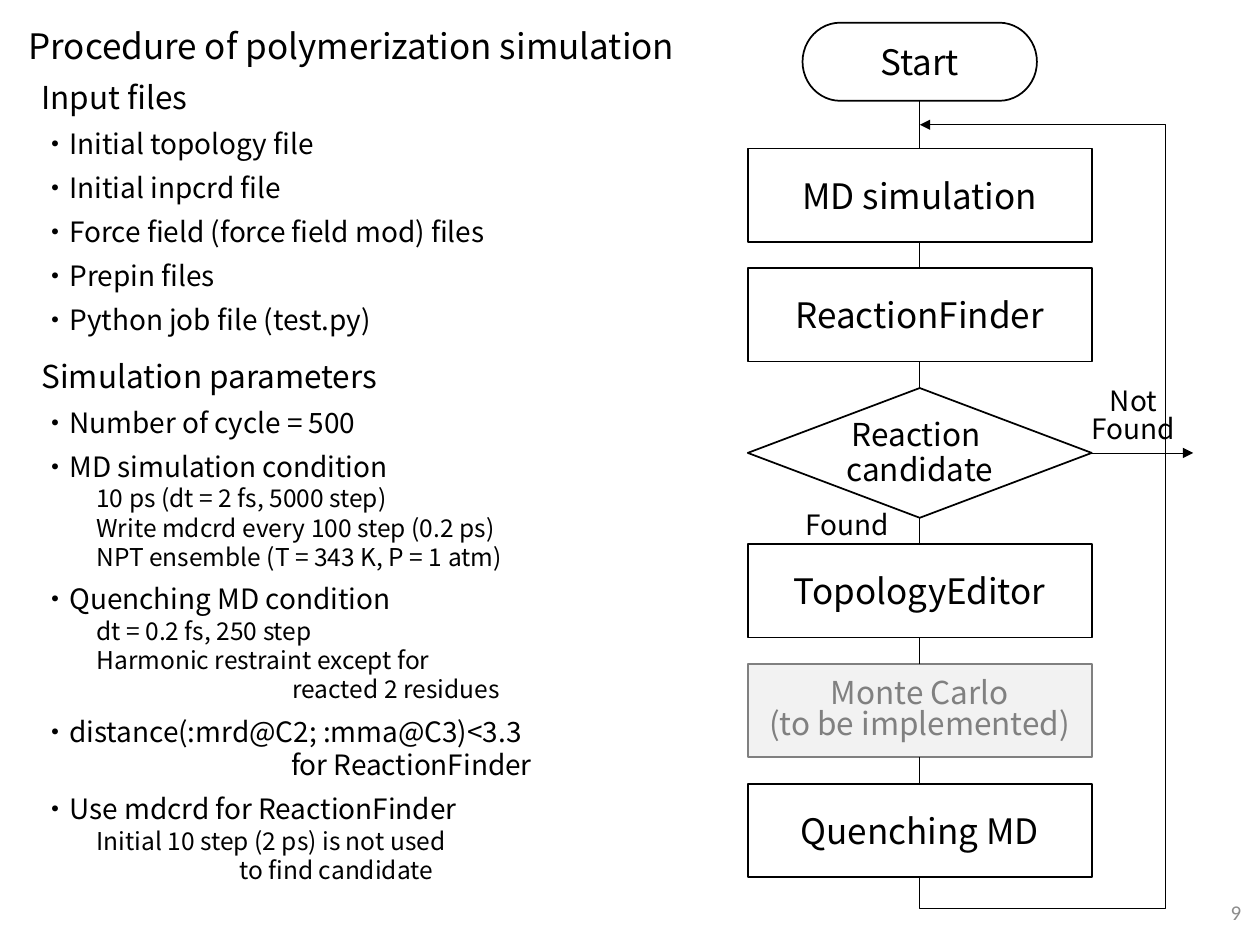
from pptx import Presentation
from pptx.dml.color import RGBColor
from pptx.enum.shapes import MSO_CONNECTOR, MSO_SHAPE
from pptx.enum.text import MSO_ANCHOR, MSO_AUTO_SIZE, PP_ALIGN
from pptx.oxml.ns import qn
from pptx.util import Inches, Pt
from lxml import etree

FONT = "Noto Sans CJK JP"
BLACK, GREY, PALE, DIM = "000000", "808080", "F2F2F2", "8C8C8C"
LEFT, MID, RIGHT = PP_ALIGN.LEFT, PP_ALIGN.CENTER, PP_ALIGN.RIGHT
TOP, CENTRE = MSO_ANCHOR.TOP, MSO_ANCHOR.MIDDLE
ROUND, BOX = MSO_SHAPE.FLOWCHART_TERMINATOR, MSO_SHAPE.FLOWCHART_PROCESS
CHOICE = MSO_SHAPE.FLOWCHART_DECISION
STRAIGHT = MSO_CONNECTOR.STRAIGHT
AXIS, WIDE, GAP, BACK = 73, 27.3, 2.1, 92.5
HEAD, ITEM, SUB = 18, 16, 14
INSET = 4.35

INPUTS = [
    (HEAD, "Input files", 0, 6),
    (ITEM, "・Initial topology file", 0, 6),
    (ITEM, "・Initial inpcrd file", 0, 6),
    (ITEM, "・Force field (force field mod) files", 0, 6),
    (ITEM, "・Prepin files", 0, 6),
    (ITEM, "・Python job file (test.py)", 0, 6),
]
PARAMS = [
    (HEAD, "Simulation parameters", 0, 6),
    (ITEM, "・Number of cycle = 500", 0, 6),
    (ITEM, "・MD simulation condition", 0, 0),
    (SUB, "10 ps (dt = 2 fs, 5000 step)", INSET, 0),
    (SUB, "Write mdcrd every 100 step (0.2 ps)", INSET, 0),
    (SUB, "NPT ensemble (T = 343 K, P = 1 atm)", INSET, 6),
    (ITEM, "・Quenching MD condition", 0, 0),
    (SUB, "dt = 0.2 fs, 250 step", INSET, 0),
    (SUB, "Harmonic restraint except for", INSET, 0),
    (SUB, "reacted 2 residues", 19.9, 6),
    (ITEM, "・distance(:mrd@C2; :mma@C3)<3.3", 0, 0),
    (ITEM, "for ReactionFinder", 19.8, 6),
    (ITEM, "・Use mdcrd for ReactionFinder", 0, 0),
    (SUB, "Initial 10 step (2 ps) is not used", INSET, 0),
    (SUB, "to find candidate", 15.7, 6),
]
STEPS = [
    (BOX, 7.4, "MD simulation", 20, None, BLACK, None),
    (BOX, 7.4, "ReactionFinder", 20, None, BLACK, None),
    (CHOICE, 10.3, "Reaction \ncandidate", 18, 20, BLACK, None),
    (BOX, 7.4, "TopologyEditor", 20, None, BLACK, None),
    (BOX, 7.4, "Monte Carlo\n(to be implemented)", 18, 18, GREY, PALE),
    (BOX, 7.4, "Quenching MD", 20, None, BLACK, None),
]


def grid(*cells):
    """Turn cells of the 100 by 75 slide grid into lengths."""
    return [Inches(cell / 10) for cell in cells]


def ink(code):
    """Make a colour from a hex string."""
    return RGBColor.from_string(code)


def put(para, text, size, hue=BLACK, font=FONT):
    """Add text to a paragraph, with a run for each line."""
    for num, line in enumerate(text.split("\n")):
        if num:
            para.add_line_break()
        run = para.add_run()
        run.text = line
        run.font.size = Pt(size)
        run.font.name = font
        run.font.color.rgb = ink(hue)


def frame(shape, align, anchor, wrap=True):
    """Set up a text frame and return its first paragraph."""
    body = shape.text_frame
    body.word_wrap = wrap
    body.auto_size = MSO_AUTO_SIZE.NONE
    body.vertical_anchor = anchor
    para = body.paragraphs[0]
    para.alignment = align
    return para


def place(shape, *cells):
    """Move a placeholder to a place on the grid."""
    shape.left, shape.top, shape.width, shape.height = grid(*cells)


def indent(para, inset):
    """Set the left margin of a paragraph and drop the template's bullet."""
    props = para._p.get_or_add_pPr()
    props.set("marL", str(grid(inset)[0]))
    props.set("indent", "0")
    etree.SubElement(props, qn("a:buNone"))


def fill_list(shape, rows):
    """Write the rows of a list into a body placeholder."""
    para = frame(shape, LEFT, TOP)
    for num, (size, text, inset, after) in enumerate(rows):
        if num:
            para = shape.text_frame.add_paragraph()
        para.space_before, para.space_after = Pt(0), Pt(after)
        indent(para, inset)
        put(para, text, size)


def node(slide, kind, cells, text, size, lead=None, hue=BLACK, fill=None):
    """Draw one step of the flow chart."""
    shape = slide.shapes.add_shape(kind, *grid(*cells))
    shape.shadow.inherit = False
    if fill:
        shape.fill.solid()
        shape.fill.fore_color.rgb = ink(fill)
    else:
        shape.fill.background()
    shape.line.color.rgb = ink(hue)
    shape.line.width = Pt(1)
    para = frame(shape, MID, CENTRE, kind != CHOICE)
    if lead:
        para.line_spacing = Pt(lead)
    put(para, text, size, hue)
    return shape


def thin(shape, arrow=False):
    """Style a thin line, with an arrowhead if asked."""
    shape.line.color.rgb = ink(BLACK)
    shape.line.width = Pt(0.5)
    if arrow:
        etree.SubElement(shape.line._get_or_add_ln(), qn("a:tailEnd")).set("type", "triangle")


def wire(slide, ends, start, side, goal=None, arrow=False):
    """Join a step to the next one, or to a free end."""
    line = slide.shapes.add_connector(STRAIGHT, *grid(*ends))
    line.begin_connect(start, side)
    if goal is not None:
        line.end_connect(goal, 0)
    thin(line, arrow)
    etree.SubElement(line._element.spPr, qn("a:effectLst"))


def loop(slide, points):
    """Draw the open path that leads back to the first step."""
    path = [tuple(grid(*point)) for point in points]
    build = slide.shapes.build_freeform(*path[0])
    build.add_line_segments(path[1:], close=False)
    shape = build.convert_to_shape()
    shape.shadow.inherit = False
    shape.fill.background()
    thin(shape, True)


def label(slide, cells, text, size, align=MID, anchor=TOP, lead=None, hue=BLACK, font=FONT):
    """Add a text box."""
    para = frame(slide.shapes.add_textbox(*grid(*cells)), align, anchor)
    if lead:
        para.line_spacing = Pt(lead)
    put(para, text, size, hue, font)


def flow(slide):
    """Stack the steps on one axis and join them."""
    last = node(slide, ROUND, (AXIS - 9.3, 1.8, 18.6, 6.2), "Start", 20)
    end, top = 8, 11.8
    for kind, high, *look in STEPS:
        step = node(slide, kind, (AXIS - WIDE / 2, top, WIDE, high), *look)
        wire(slide, (AXIS, end, AXIS, top), last, 2, step)
        if kind == CHOICE:
            mid = top + high / 2
            wire(slide, (AXIS + WIDE / 2, mid, 94.7, mid), step, 3, arrow=True)
        last, end = step, top + high
        top = end + GAP
    loop(slide, [(AXIS, end), (AXIS, 72.1), (BACK, 72.1), (BACK, 9.9), (AXIS, 9.9)])


def main():
    """Build the slide and save it."""
    deck = Presentation()
    deck.slide_width, deck.slide_height = grid(100, 75)
    slide = deck.slides.add_slide(deck.slide_layouts[3])
    title, first, second = slide.placeholders
    place(title, 1.25, 1.45, 58.1, 4.4)
    put(frame(title, LEFT, TOP), "Procedure of polymerization simulation", 20)
    place(first, 2.3, 5.7, 52.6, 21.7)
    fill_list(first, INPUTS)
    place(second, 2.3, 27.85, 54.7, 43.6)
    fill_list(second, PARAMS)
    flow(slide)
    label(slide, (62.5, 39.8, 9.5, 3.7), "Found", 16)
    label(slide, (85.2, 30.4, 9.5, 5.5), "Not\nFound", 16, lead=16)
    label(slide, (77, 70.4, 22.5, 4), "9", 12, RIGHT, CENTRE, hue=DIM, font="Calibri")
    deck.save("out.pptx")


if __name__ == "__main__":
    main()
